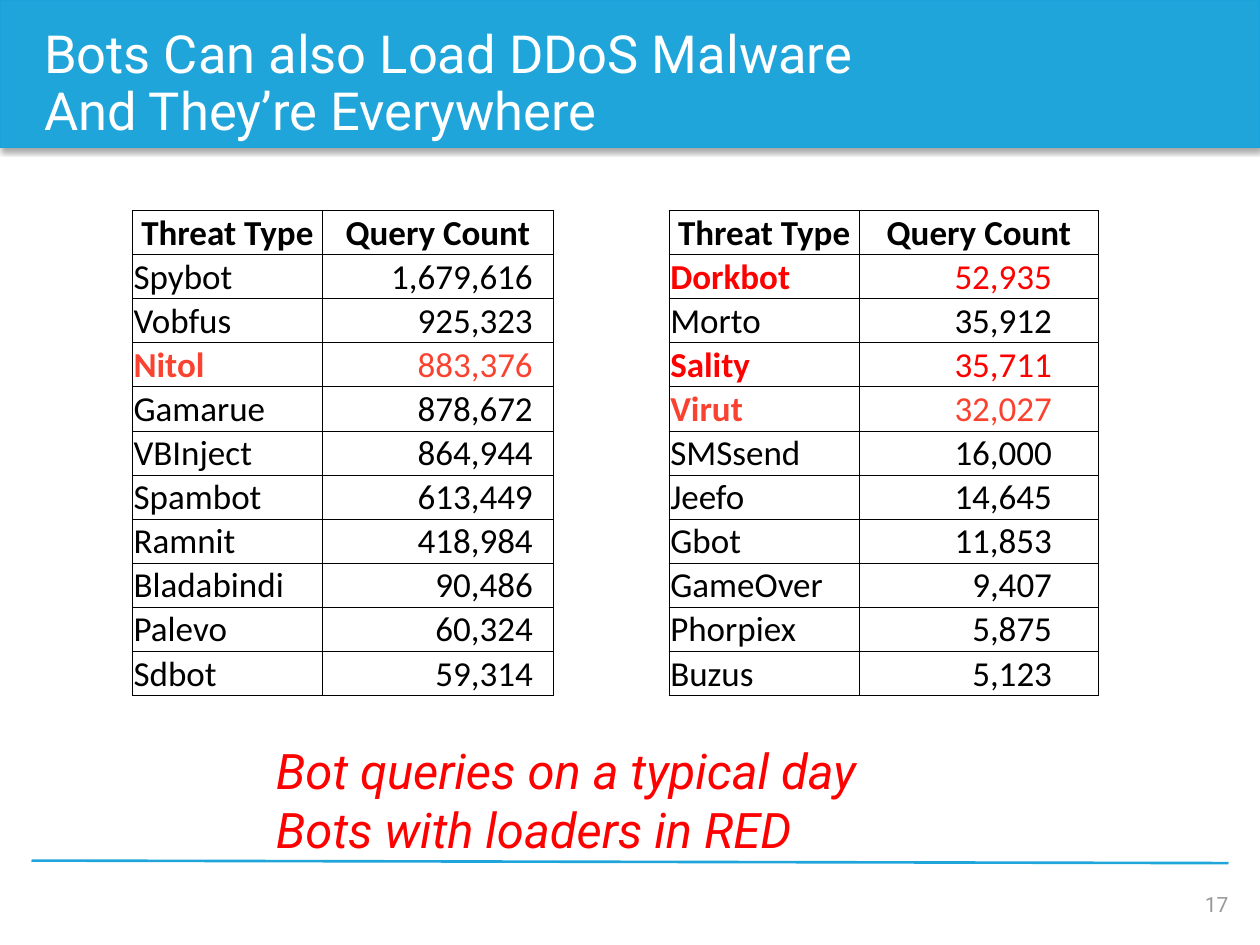
from collections import namedtuple

from lxml import etree
from pptx import Presentation
from pptx import util as u
from pptx.dml.color import RGBColor
from pptx.enum import shapes, text
from pptx.oxml import parse_xml
from pptx.oxml.ns import nsdecls, qn

BLUE = RGBColor(0x1F, 0xA5, 0xDA)
BAND_EDGE = RGBColor(0x1A, 0xA3, 0xDA)
WHITE = RGBColor(0xFF, 0xFF, 0xFF)
BLACK = RGBColor(0, 0, 0)
GREY = RGBColor(0x98, 0x98, 0x9A)
RED = RGBColor(0xFF, 0, 0)
CORAL = RGBColor(0xF9, 0x43, 0x30)

COLUMNS, ROWS = 100, 75
UNIT = u.Inches(0.1)
Box = namedtuple("Box", "left top width height")

HEADINGS = ("Threat Type", "Query Count")
TOP_THREATS = [
    ("Spybot", "1,679,616"), ("Vobfus", "925,323"), ("Nitol", "883,376"),
    ("Gamarue", "878,672"), ("VBInject", "864,944"), ("Spambot", "613,449"),
    ("Ramnit", "418,984"), ("Bladabindi", "90,486"), ("Palevo", "60,324"),
    ("Sdbot", "59,314"),
]
OTHER_THREATS = [
    ("Dorkbot", "52,935"), ("Morto", "35,912"), ("Sality", "35,711"),
    ("Virut", "32,027"), ("SMSsend", "16,000"), ("Jeefo", "14,645"),
    ("Gbot", "11,853"), ("GameOver", "9,407"), ("Phorpiex", "5,875"),
    ("Buzus", "5,123"),
]
LOADERS = {"Nitol": CORAL, "Dorkbot": RED, "Sality": RED, "Virut": CORAL}


def grid(*cells):
    return Box(*(int(cell * UNIT) for cell in cells))


def add_run(paragraph, words, size, color, font="Roboto", bold=False, italic=False):
    run = paragraph.add_run()
    run.text = words
    run.font.name = font
    run.font.size = u.Pt(size)
    run.font.color.rgb = color
    run.font.bold = bold
    run.font.italic = italic


def set_margins(frame, left=0, top=0, right=0, bottom=0):
    frame.margin_left, frame.margin_top = u.Inches(left), u.Inches(top)
    frame.margin_right, frame.margin_bottom = u.Inches(right), u.Inches(bottom)


def add_header(slide, box, lines):
    band = slide.shapes.add_shape(shapes.MSO_SHAPE.RECTANGLE, *box)
    band.fill.solid()
    band.fill.fore_color.rgb = BLUE
    band.line.color.rgb = BAND_EDGE
    band.line.width = u.Pt(0.75)
    band._element.spPr.append(parse_xml(
        f'<a:effectLst {nsdecls("a")}><a:outerShdw blurRad="{u.Pt(3.1)}" '
        f'dist="{u.Pt(1.8)}" dir="5400000" rotWithShape="0"><a:srgbClr val="000000">'
        '<a:alpha val="35000"/></a:srgbClr></a:outerShdw></a:effectLst>'))

    title = slide.shapes.title
    title._element.addprevious(band._element)
    title.left, title.top = box.left + int(2.5 * UNIT), box.top + int(2.6 * UNIT)
    title.width, title.height = box.width - 5 * UNIT, int(8.3 * UNIT)
    frame = title.text_frame
    frame.vertical_anchor = text.MSO_ANCHOR.MIDDLE
    frame.auto_size = text.MSO_AUTO_SIZE.NONE
    heading = frame.paragraphs[0]
    heading.alignment = text.PP_ALIGN.LEFT
    heading.line_spacing = 0.9
    for index, line in enumerate(lines):
        if index:
            heading.add_line_break()
        add_run(heading, line, 30, WHITE)


def add_borders(cell):
    properties = cell._tc.get_or_add_tcPr()
    for position, side in enumerate(("lnL", "lnR", "lnT", "lnB")):
        border = parse_xml(
            f'<a:{side} {nsdecls("a")} w="{u.Pt(0.5)}"><a:solidFill>'
            f'<a:srgbClr val="{BLACK}"/></a:solidFill></a:{side}>')
        properties.insert(position, border)


def add_threat_table(slide, box, threats, type_width, count_margin):
    records = [HEADINGS, *threats]
    table = slide.shapes.add_table(len(records), len(HEADINGS), *box).table
    table.first_row = table.horz_banding = False
    table.columns[0].width = type_width
    table.columns[1].width = box.width - type_width
    for row, record in enumerate(records):
        table.rows[row].height = box.height // len(records)
        color = LOADERS.get(record[0], BLACK)
        for column, words in enumerate(record):
            cell = table.cell(row, column)
            is_heading, is_count = row == 0, column == 1
            set_margins(cell, 0.01, 0.01,
                        count_margin if is_count and not is_heading else 0.01)
            cell.vertical_anchor = text.MSO_ANCHOR.BOTTOM
            cell.fill.background()
            add_borders(cell)
            paragraph = cell.text_frame.paragraphs[0]
            if is_heading:
                paragraph.alignment = text.PP_ALIGN.CENTER
            elif is_count:
                paragraph.alignment = text.PP_ALIGN.RIGHT
            bold = is_heading or (not is_count and record[0] in LOADERS)
            add_run(paragraph, words, 20, color, "Calibri", bold)


def add_caption(slide, box, lines):
    frame = slide.shapes.add_textbox(*box).text_frame
    frame.word_wrap = False
    set_margins(frame)
    for index, line in enumerate(lines):
        paragraph = frame.add_paragraph() if index else frame.paragraphs[0]
        add_run(paragraph, line, 28, RED, italic=True)


def add_footer(slide, box, number):
    right = box.left + box.width
    rule = slide.shapes.add_connector(
        shapes.MSO_CONNECTOR.STRAIGHT, box.left, box.top, right, box.top + UNIT // 5)
    rule.line.color.rgb = BLUE
    rule.line.width = u.Pt(1.5)
    etree.SubElement(rule._element.spPr, qn("a:effectLst"))

    width = int(23.3 * UNIT)
    frame = slide.shapes.add_textbox(
        right - width, box.top + UNIT // 5, width, box.height).text_frame
    frame.word_wrap = True
    frame.vertical_anchor = text.MSO_ANCHOR.MIDDLE
    set_margins(frame, top=0.25)
    paragraph = frame.paragraphs[0]
    paragraph.alignment = text.PP_ALIGN.RIGHT
    add_run(paragraph, number, 12, GREY)


def main():
    deck = Presentation()
    deck.slide_width, deck.slide_height = COLUMNS * UNIT, ROWS * UNIT
    slide = deck.slides.add_slide(deck.slide_layouts[5])
    add_header(slide, grid(0, 0, COLUMNS, 11.7),
               ["Bots Can also Load DDoS Malware", "And They’re Everywhere"])
    add_footer(slide, grid(2.5, 68.3, COLUMNS - 5, 4), "17")
    type_width = int(15.1 * UNIT)
    add_threat_table(slide, grid(10.5, 16.7, 33.4, 38.5), TOP_THREATS, type_width, 0.16)
    add_threat_table(slide, grid(53.1, 16.7, 34.1, 38.5), OTHER_THREATS, type_width, 0.37)
    add_caption(slide, grid(21.9, 58.8, 48.3, 9.4),
                ["Bot queries on a typical day", "Bots with loaders in RED"])
    deck.save("out.pptx")


if __name__ == "__main__":
    main()
